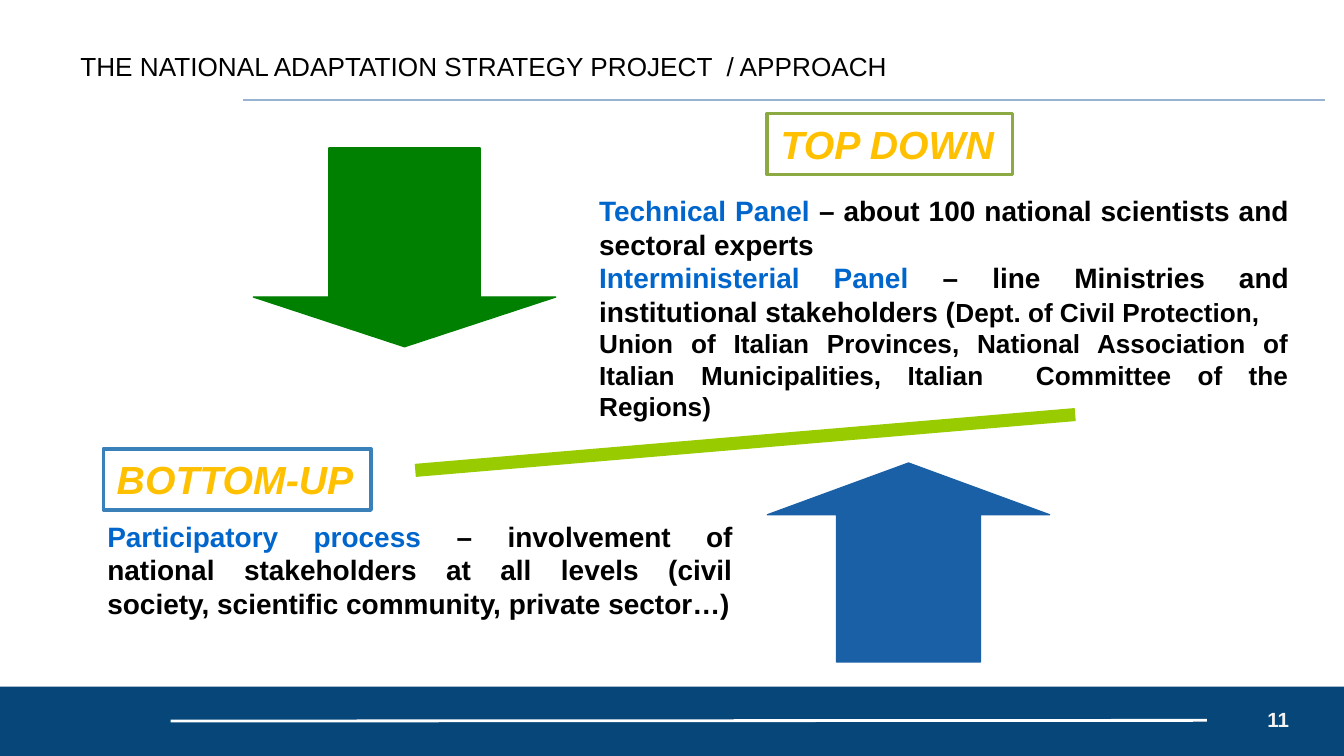
from lxml.etree import SubElement
from pptx import Presentation
from pptx.dml.color import RGBColor
from pptx.enum.shapes import MSO_CONNECTOR, MSO_SHAPE as Kind
from pptx.enum.text import MSO_ANCHOR as Anchor, PP_ALIGN as Align
from pptx.oxml.ns import qn
from pptx.util import Inches, Pt

WHITE = RGBColor(0xFF, 0xFF, 0xFF)
BLACK = RGBColor(0, 0, 0)
NAVY = RGBColor(0x06, 0x46, 0x79)
PALE = RGBColor(0x97, 0xB3, 0xD1)
GRAY = RGBColor(0xF3, 0xF3, 0xF3)
GOLD = RGBColor(0xFF, 0xC0, 0x00)
OLIVE = RGBColor(0x8B, 0xAB, 0x42)
GREEN = RGBColor(0, 0x80, 0)
LIME = RGBColor(0x99, 0xCC, 0)
LINK = RGBColor(0, 0x66, 0xCC)
SKY = RGBColor(0x3A, 0x81, 0xBA)
BLUE = RGBColor(0x1A, 0x60, 0xA6)

COLS = 100  # square cells, so the slide is 56.25 rows high
HEAD = {"size": Pt(14)}
PAGE = {"size": Pt(11), "bold": True}
BODY = {"size": Pt(15), "bold": True}
NOTE = {"size": Pt(14), "bold": True}
TAG = {"size": Pt(21), "bold": True, "italic": True}


class Deck:
    def __init__(self, font):
        self.font = font
        self.file = Presentation()
        self.file.slide_width, self.file.slide_height = Inches(10), Inches(5.625)
        self.slide = self.file.slides.add_slide(self.file.slide_layouts[6])

    def cells(self, *counts):
        return [round(n * self.file.slide_width / COLS) for n in counts]

    def shape(self, kind, spot, fill, edge=None, width=0.75):
        item = self.slide.shapes.add_shape(kind, *self.cells(*spot))
        item.shadow.inherit = False
        item.fill.solid()
        item.fill.fore_color.rgb = fill
        if edge is None:
            item.line.fill.background()
        else:
            item.line.color.rgb = edge
            item.line.width = Pt(width)
        return item

    def arrow(self, spot, color, shaft, tip, turn=0):
        item = self.shape(Kind.DOWN_ARROW, spot, color, color)
        item.adjustments[0], item.adjustments[1] = shaft, tip
        item.rotation = turn

    def line(self, ends, color, width):
        item = self.slide.shapes.add_connector(MSO_CONNECTOR.STRAIGHT, *self.cells(*ends))
        item.line.color.rgb = color
        item.line.width = Pt(width)
        SubElement(item._element.spPr, qn("a:effectLst"))

    def put(self, frame, paras, align=Align.LEFT):
        """Fill a frame; each paragraph is a list of (words, color, style) runs."""
        for i, runs in enumerate(paras):
            para = frame.add_paragraph() if i else frame.paragraphs[0]
            para.alignment = align
            for words, color, style in runs:
                run = para.add_run()
                run.text = words
                run.font.name = self.font
                run.font.color.rgb = color
                for key, value in style.items():
                    setattr(run.font, key, value)

    def text(self, spot, paras, align=Align.LEFT, anchor=Anchor.TOP):
        frame = self.slide.shapes.add_textbox(*self.cells(*spot)).text_frame
        frame.word_wrap = True
        frame.vertical_anchor = anchor
        if anchor != Anchor.TOP:
            frame.margin_top = frame.margin_bottom = Inches(0.1)
        self.put(frame, paras, align)

    def tag(self, spot, words, edge):
        frame = self.shape(Kind.RECTANGLE, spot, WHITE, edge, 2).text_frame
        frame.word_wrap = False
        frame.vertical_anchor = Anchor.TOP
        self.put(frame, [[(words, GOLD, TAG)]])


def main():
    deck = Deck("Arial")
    deck.shape(Kind.RECTANGLE, (0, 51.1, COLS, 5.15), NAVY)
    deck.line((12.7, 53.65, 89.8, 53.6), WHITE, 1.5)
    deck.line((18.1, 7.45, 98.6, 7.45), PALE, 0.75)
    title = "THE NATIONAL ADAPTATION STRATEGY PROJECT  / APPROACH"
    deck.text((5, 0.4, 90, 6.7), [[(title, BLACK, HEAD)]], anchor=Anchor.BOTTOM)
    deck.text((90.9, 51.4, 6, 4.3), [[("11", GRAY, PAGE)]], Align.RIGHT, Anchor.MIDDLE)

    deck.tag((57.1, 8.45, 18.25, 4.55), "TOP DOWN", OLIVE)
    deck.arrow((18.85, 11, 22.5, 14.8), GREEN, 0.5, 0.25)
    deck.text((43.6, 13.9, 53.3, 23.1), [
        [("Technical Panel", LINK, BODY),
         (" – about 100 national scientists and sectoral experts", BLACK, BODY)],
        [("Interministerial Panel", LINK, BODY),
         (" – line Ministries and institutional stakeholders (", BLACK, BODY),
         ("Dept. of Civil Protection,", BLACK, NOTE)],
        [("Union of Italian Provinces, National Association of Italian Municipalities, "
          "Italian  Committee of the Regions)", BLACK, NOTE)],
    ], Align.JUSTIFY)

    deck.line((30.9, 35, 80, 30.85), LIME, 7)

    deck.tag((7.7, 33.4, 19.9, 4.55), "BOTTOM-UP", SKY)
    deck.arrow((57.1, 34.45, 21, 14.8), BLUE, 0.51, 0.26, turn=180)
    deck.text((7, 38.15, 48.5, 11.1), [
        [("Participatory process ", LINK, BODY),
         ("– involvement of national stakeholders at all levels "
          "(civil society, scientific community, private sector…)", BLACK, BODY)],
    ], Align.JUSTIFY)
    deck.file.save("out.pptx")


if __name__ == "__main__":
    main()
